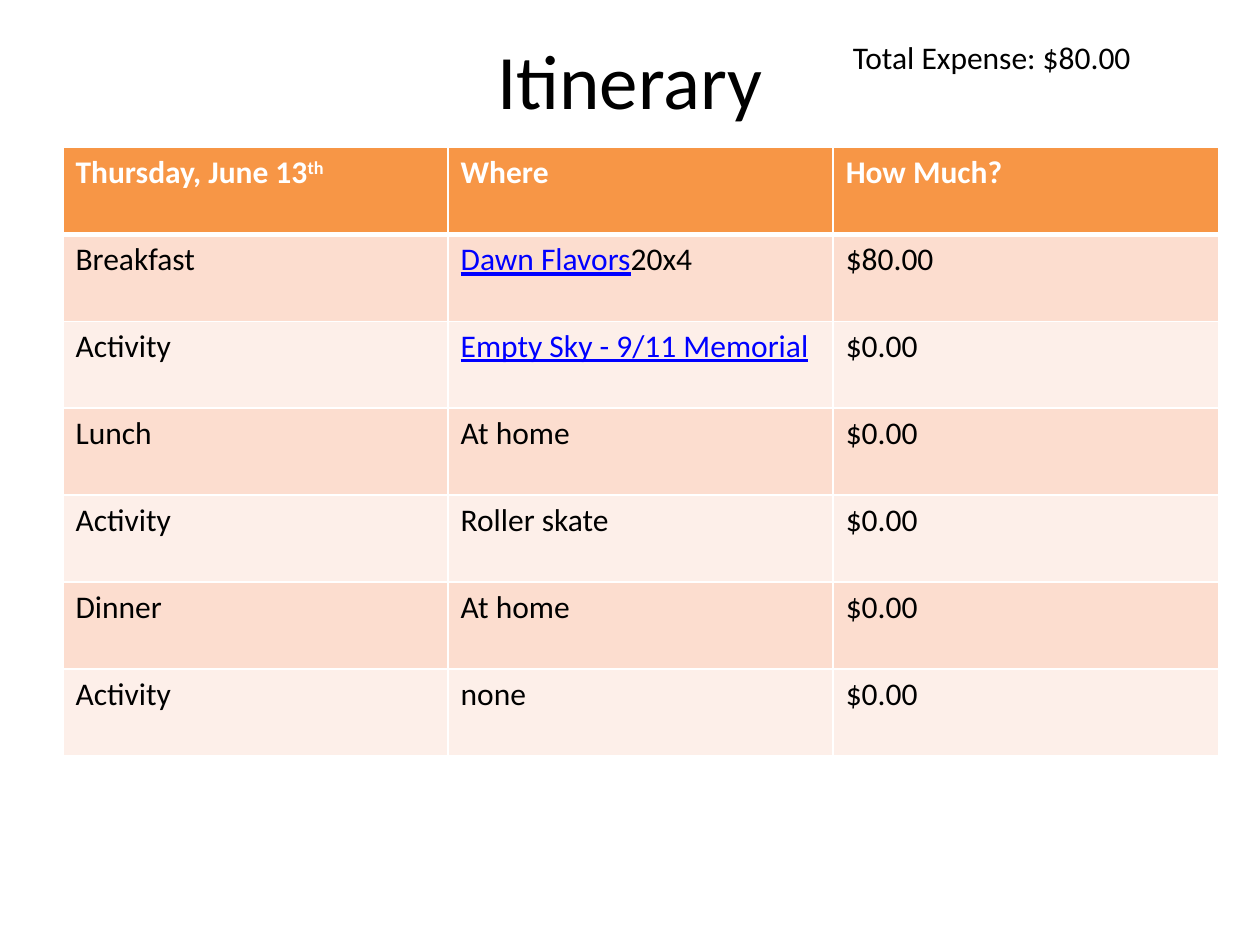
import pptx
import pptx.dml.color
import pptx.enum.text
import pptx.oxml
import pptx.oxml.ns
import pptx.util
from pptx.util import Inches

# Content: a cell is a list of (text, style name) runs
TITLE = "Itinerary"
TOTAL = "Total Expense: $80.00"
ROWS = [
    [[("Thursday, June 13", "header"), ("th", "superscript")],
     [("Where", "header")], [("How Much?", "header")]],
    [[("Breakfast", "body")],
     [("Dawn Flavors", "link"), ("20x4", "body")], [("$80.00", "body")]],
    [[("Activity", "body")],
     [("Empty Sky - 9/11 Memorial", "link")], [("$0.00", "body")]],
    [[("Lunch", "body")], [("At home", "body")], [("$0.00", "body")]],
    [[("Activity", "body")], [("Roller skate", "body")], [("$0.00", "body")]],
    [[("Dinner", "body")], [("At home", "body")], [("$0.00", "body")]],
    [[("Activity", "body")], [("none", "body")], [("$0.00", "body")]],
]

# Formats
BODY = {"name": "Calibri", "size": pptx.util.Pt(18), "bold": False, "color": "000000"}
STYLES = {
    "body": BODY,
    "title": {**BODY, "size": pptx.util.Pt(44)},
    "header": {**BODY, "bold": True, "color": "FFFFFF"},
    "superscript": {**BODY, "bold": True, "color": "FFFFFF", "baseline": "30000"},
    "link": {**BODY, "color": "0000FF", "underline": True},
}
HEADER_FILL, BAND_FILLS = "F79646", ("FCDDCF", "FDEFE9")
BORDER_COLOR = "FFFFFF"


def rgb(value):
    return pptx.dml.color.RGBColor.from_string(value)


def add_run(paragraph, text, style):
    run = paragraph.add_run()
    run.text = text
    for key, value in STYLES[style].items():
        if key == "color":
            run.font.color.rgb = rgb(value)
        elif key == "baseline":
            run.font._element.set("baseline", value)
        else:
            setattr(run.font, key, value)


def add_text(slide, box, text, style, **frame_format):
    frame = slide.shapes.add_textbox(*map(Inches, box)).text_frame
    frame.word_wrap = True
    for key, value in frame_format.items():
        setattr(frame, key, value)
    add_run(frame.paragraphs[0], text, style)
    return frame.paragraphs[0]


def set_borders(cell, widths):
    properties = cell._tc.get_or_add_tcPr()
    for index, (side, points) in enumerate(widths.items()):
        properties.insert(index, pptx.oxml.parse_xml(
            f'<a:ln{side} {pptx.oxml.ns.nsdecls("a")} w="{pptx.util.Pt(points)}">'
            f'<a:solidFill><a:srgbClr val="{BORDER_COLOR}"/></a:solidFill></a:ln{side}>'))


def add_itinerary(slide):
    table = slide.shapes.add_table(
        len(ROWS), len(ROWS[0]), Inches(0.5), Inches(1.17), Inches(9.17), Inches(4.83)).table
    for row_index, row in enumerate(ROWS):
        fill = BAND_FILLS[(row_index - 1) % 2] if row_index else HEADER_FILL
        # A heavier rule separates the header from the body
        widths = {"L": 1, "R": 1, "T": 3 if row_index == 1 else 1,
                  "B": 1 if row_index else 3}
        for column_index, runs in enumerate(row):
            cell = table.cell(row_index, column_index)
            cell.fill.solid()
            cell.fill.fore_color.rgb = rgb(fill)
            set_borders(cell, widths)
            for text, style in runs:
                add_run(cell.text_frame.paragraphs[0], text, style)


def main():
    presentation = pptx.Presentation()
    presentation.slide_width, presentation.slide_height = Inches(10), Inches(7.5)
    slide = presentation.slides.add_slide(presentation.slide_layouts[6])

    # Heading and total
    title = add_text(slide, (0.5, 0, 9, 1.25), TITLE, "title",
                     vertical_anchor=pptx.enum.text.MSO_ANCHOR.MIDDLE)
    title.alignment = pptx.enum.text.PP_ALIGN.CENTER
    add_text(slide, (6.67, 0.25, 3.08, 0.4), TOTAL, "body",
             auto_size=pptx.enum.text.MSO_AUTO_SIZE.SHAPE_TO_FIT_TEXT)

    add_itinerary(slide)
    presentation.save("out.pptx")


if __name__ == "__main__":
    main()
